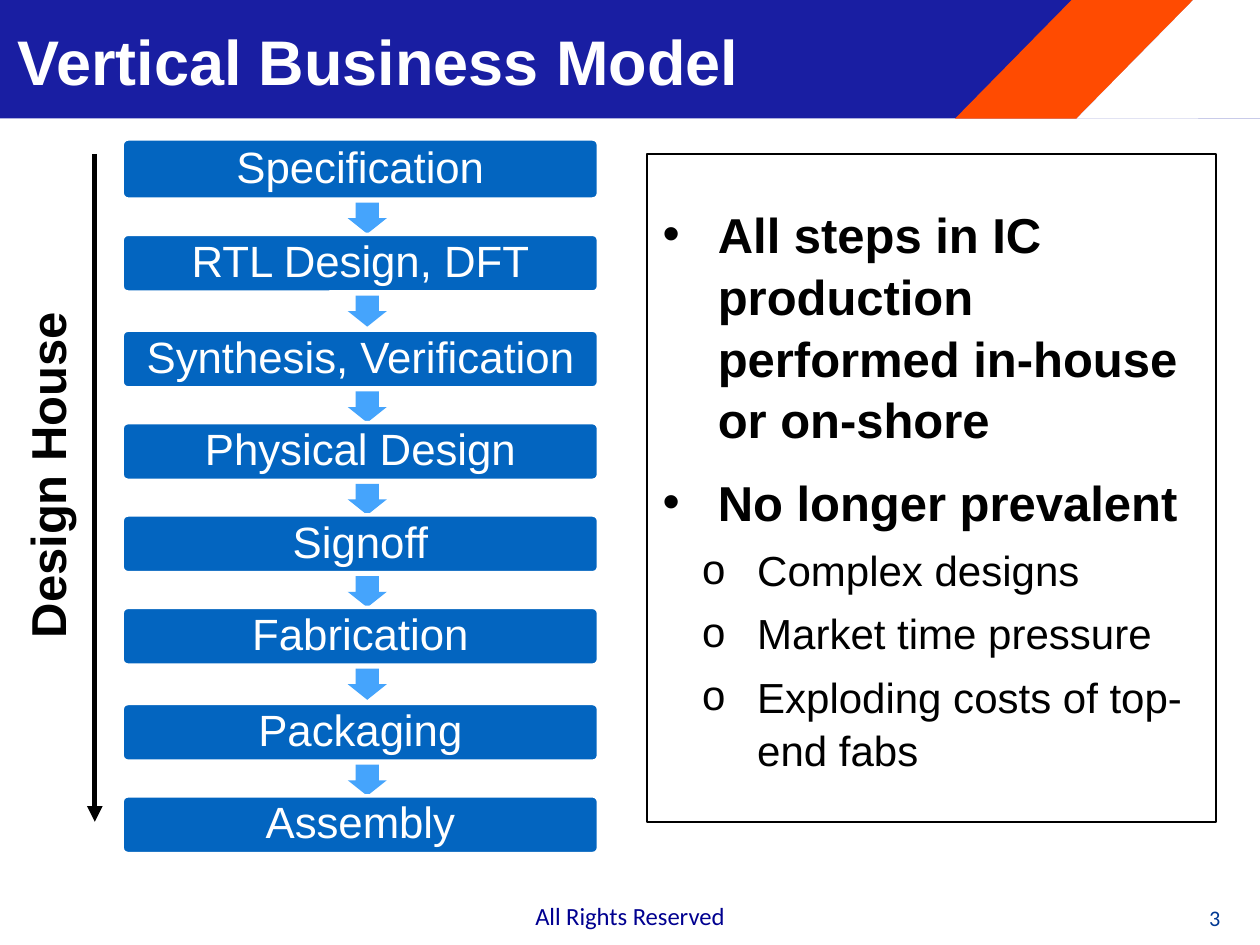
import pptx
import pptx.dml.color
import pptx.enum.shapes
import pptx.enum.text
import pptx.oxml
import pptx.oxml.ns
import pptx.util

Pt = pptx.util.Pt
SHAPES = pptx.enum.shapes.MSO_SHAPE
ALIGN = pptx.enum.text.PP_ALIGN
ANCHOR = pptx.enum.text.MSO_ANCHOR


def rgb(code):
    """Return the colour for a hex string."""
    return pptx.dml.color.RGBColor.from_string(code)


def add_element(parent, tag, **attributes):
    """Append a drawing element with its attributes."""
    element = pptx.oxml.parse_xml(f"<a:{tag} {pptx.oxml.ns.nsdecls('a')}/>")
    for name, value in attributes.items():
        element.set(name, str(value))
    parent.append(element)


def write_text(paragraph, text, size=24, color="000000", bold=False, font="Arial",
               align=ALIGN.LEFT, spacing=None, before=0, after=0, bullet=None,
               margin=0, hanging=0):
    """Fill one paragraph with formatted text."""
    if bullet:
        properties = paragraph._p.get_or_add_pPr()
        properties.set("marL", str(Pt(margin)))
        properties.set("indent", str(-Pt(hanging)))
        add_element(properties, "buFont", typeface=font)
        add_element(properties, "buChar", char=bullet)
    paragraph.alignment = align
    paragraph.line_spacing = spacing
    paragraph.space_before, paragraph.space_after = Pt(before), Pt(after)
    run = paragraph.add_run()
    run.text = text
    run.font.name, run.font.size, run.font.bold = font, Pt(size), bold
    run.font.color.rgb = rgb(color)


class SlideBuilder:
    """Hold the style and the current slide."""

    navy, orange, white, black = "191EA2", "FF4B01", "FFFFFF", "000000"
    step_fill, arrow_fill = "0365C0", "45A4FC"

    def __init__(self, slide):
        """Keep the slide that receives the elements."""
        self.slide = slide

    def paint(self, shape, fill=None, line=None, width=1):
        """Set fill and outline and drop the shadow."""
        shape.shadow.inherit = False
        if fill:
            shape.fill.solid()
            shape.fill.fore_color.rgb = rgb(fill)
        else:
            shape.fill.background()
        if line:
            shape.line.color.rgb = rgb(line)
            shape.line.width = Pt(width)
        else:
            shape.line.fill.background()

    def frame(self, shape, inset=0, anchor=ANCHOR.MIDDLE, wrap=True):
        """Prepare the text frame of a shape."""
        frame = shape.text_frame
        frame.word_wrap, frame.vertical_anchor = wrap, anchor
        frame.margin_left = frame.margin_right = Pt(inset)
        frame.margin_top = frame.margin_bottom = Pt(inset)
        return frame

    def shape(self, kind, box, adjustments=(), **look):
        """Add a preset shape."""
        shape = self.slide.shapes.add_shape(kind, *map(Pt, box))
        for index, value in enumerate(adjustments):
            shape.adjustments[index] = value
        self.paint(shape, **look)
        return shape

    def polygon(self, corners, fill):
        """Add a closed outline."""
        start, *others = [(Pt(x), Pt(y)) for x, y in corners]
        builder = self.slide.shapes.build_freeform(*start, scale=1.0)
        builder.add_line_segments(others, close=True)
        self.paint(builder.convert_to_shape(), fill)

    def label(self, text, box, inset=0, anchor=ANCHOR.MIDDLE, wrap=True, rotation=0, **style):
        """Add a text box with one line."""
        label = self.slide.shapes.add_textbox(*map(Pt, box))
        label.rotation = rotation
        write_text(self.frame(label, inset, anchor, wrap).paragraphs[0], text, **style)

    def step(self, text, top, height):
        """Add one step of the flow."""
        step = self.shape(SHAPES.ROUNDED_RECTANGLE, (69.8, top, 272.2, height), (0.1,),
                          fill=self.step_fill, line=self.white, width=2)
        write_text(self.frame(step, 8.6).paragraphs[0], text, size=25,
                   color=self.white, align=ALIGN.CENTER, spacing=0.9)

    def step_arrow(self, top):
        """Add the block arrow below a step."""
        self.shape(SHAPES.DOWN_ARROW, (198.7, top, 22.3, 17.8), (0.6, 0.5),
                   fill=self.arrow_fill)

    def bullets(self, box, items):
        """Add an outlined panel of bulleted text."""
        frame = self.frame(self.shape(SHAPES.RECTANGLE, box, line=self.black))
        for index, (text, style) in enumerate(items):
            paragraph = frame.add_paragraph() if index else frame.paragraphs[0]
            write_text(paragraph, text, spacing=1.05, hanging=31.5,
                       before=6 if index else 0, **style)

    def arrow(self, start, end):
        """Add a straight line with an arrowhead."""
        line = self.slide.shapes.add_connector(
            pptx.enum.shapes.MSO_CONNECTOR.STRAIGHT, *map(Pt, start + end))
        line.line.color.rgb, line.line.width = rgb(self.black), Pt(3)
        add_element(line.line._get_or_add_ln(), "tailEnd", type="triangle")
        add_element(line._element.spPr, "effectLst")

    def header(self, title):
        """Add the title band with its slanted stripe."""
        top, bottom = -2.9, 67.7
        left, middle, right = 545.8, 615.2, 684.7
        self.shape(SHAPES.RECTANGLE, (-0.7, top, 720.7, bottom - top), fill=self.navy)
        self.polygon([(left, bottom), (middle, top), (right, top), (middle, bottom)], self.orange)
        self.polygon([(right, bottom), (middle, bottom), (right, top)], self.white)
        self.shape(SHAPES.RECTANGLE, (right, top, 720 - right, bottom - top), fill=self.white)
        self.label(title, (0, 0, 646, 68.4), inset=10, size=36, color=self.white, bold=True)


def main():
    """Build the slide and save it."""
    deck = pptx.Presentation()
    deck.slide_width, deck.slide_height = Pt(720), Pt(540)
    builder = SlideBuilder(deck.slides.add_slide(deck.slide_layouts[6]))
    builder.header("Vertical Business Model")
    builder.label("All Rights Reserved", (0, 511.2, 720, 24.5), inset=3.6, anchor=ANCHOR.TOP,
                  size=14.1, font="Calibri", color="000090", align=ALIGN.CENTER)

    steps = [("Specification", 79.4), ("RTL Design, DFT", 133.9),
             ("Synthesis, Verification", 188.7), ("Physical Design", 241.5),
             ("Signoff", 294.3), ("Fabrication", 347.1),
             ("Packaging", 402), ("Assembly", 454.8)]
    for index, (name, top) in enumerate(steps):
        height = 33 if index else 34.4
        builder.step(name, top, height)
        if index < len(steps) - 1:
            builder.step_arrow(top + height + 2)

    builder.label("Design House", (-92.2, 250.6, 237.6, 41.8), inset=4.3, rotation=270,
                  size=28, bold=True, align=ALIGN.CENTER)
    point = dict(size=28, bold=True, bullet="•", margin=40.5)
    detail = dict(size=24, bullet="o", margin=63)
    builder.bullets((369.7, 88, 325.4, 381.8), [
        ("All steps in IC production performed in-house or on-shore", dict(point, after=6)),
        ("No longer prevalent", point),
        ("Complex designs", detail),
        ("Market time pressure", detail),
        ("Exploding costs of top-end fabs", detail),
    ])
    builder.arrow((54.2, 88), (54.2, 469.6))
    builder.label("3", (686.2, 517, 15.8, 15.1), anchor=ANCHOR.TOP, wrap=False, size=12.7,
                  font="Calibri", color="003893", align=ALIGN.CENTER)
    deck.save("out.pptx")


if __name__ == "__main__":
    main()
